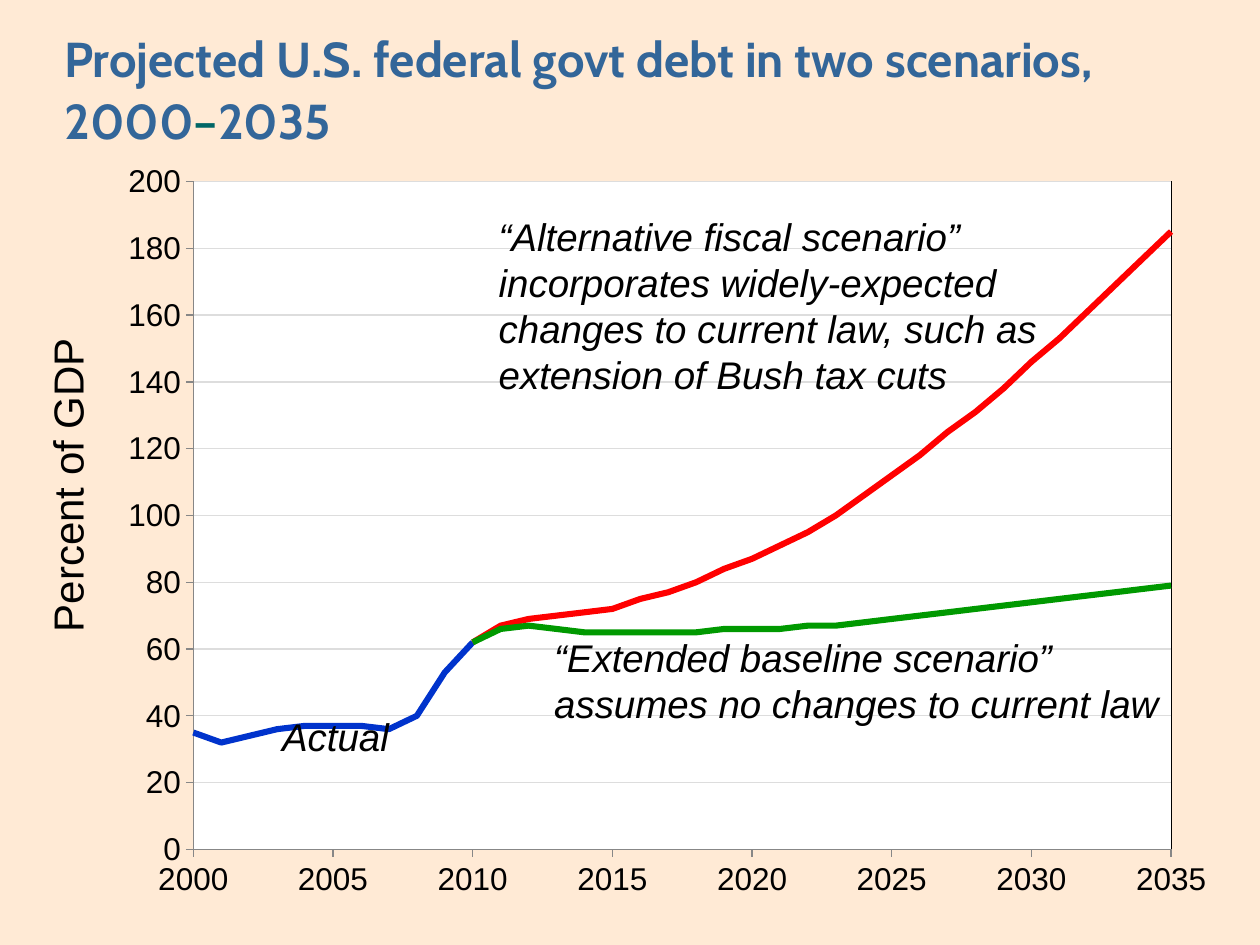
from lxml import etree
from pptx import Presentation
from pptx.chart.data import XyChartData
from pptx.dml.color import RGBColor
from pptx.enum.chart import XL_CHART_TYPE, XL_MARKER_STYLE, XL_TICK_MARK
from pptx.enum.text import MSO_ANCHOR, PP_ALIGN
from pptx.oxml import parse_xml
from pptx.oxml.ns import nsdecls, qn
from pptx.util import Inches, Pt

SCATTER = XL_CHART_TYPE.XY_SCATTER_LINES_NO_MARKERS
NO_MARKER = XL_MARKER_STYLE.NONE
OUTSIDE, NO_TICK = XL_TICK_MARK.OUTSIDE, XL_TICK_MARK.NONE
TOP, MIDDLE = MSO_ANCHOR.TOP, MSO_ANCHOR.MIDDLE
LEFT, CENTER = PP_ALIGN.LEFT, PP_ALIGN.CENTER

COLORS = {
    "background": "FFEAD5", "title": "336699", "dash": "006666",
    "text": "000000", "plot": "FFFFFF", "grid": "DDDDDD", "axis": "878787",
    "baseline": "009900", "alternative": "FF0000", "actual": "0033CC",
}
PLOT_SHARES = {"x": 0.078, "y": 0.043, "w": 0.871, "h": 0.875}

FIRST_YEAR = 2000
NOT_PROJECTED = [None] * 10
ACTUAL = [35, 32, 34, 36, 37, 37, 37, 36, 40, 53, 62]
BASELINE = NOT_PROJECTED + [
    62, 66, 67, 66, 65, 65, 65, 65, 65, 66, 66, 66, 67, 67, 68, 69,
    70, 71, 72, 73, 74, 75, 76, 77, 78, 79]
ALTERNATIVE = NOT_PROJECTED + [
    62, 67, 69, 70, 71, 72, 75, 77, 80, 84, 87, 91, 95, 100, 106, 112,
    118, 125, 131, 138, 146, 153, 161, 169, 177, 185]
# name, values, colour
SERIES = [
    ("Series 1", BASELINE, "baseline"),
    ("Series 2", ALTERNATIVE, "alternative"),
    ("Series 3", ACTUAL, "actual"),
]


def rgb(name):
    return RGBColor.from_string(COLORS[name])


class Deck:
    """Style and current slide; boxes are left, top, width, height in percent."""

    font, heading_font = "Arial", "Cabin"

    def __init__(self):
        self.prs = Presentation()
        self.prs.slide_width, self.prs.slide_height = Inches(10), Inches(7.5)

    def add_slide(self):
        self.s = self.prs.slides.add_slide(self.prs.slide_layouts[6])
        self.s.background.fill.solid()
        self.s.background.fill.fore_color.rgb = rgb("background")

    def place(self, box):
        sizes = (self.prs.slide_width, self.prs.slide_height) * 2
        return [round(size * share / 100) for size, share in zip(sizes, box)]

    def text(self, box, runs, size, font=None, bold=False, italic=False,
             anchor=TOP, align=LEFT, inset=True, rotation=0, spacing=1.0):
        """Add one paragraph made of (text, colour) runs."""
        sp = self.s.shapes.add_textbox(*self.place(box))
        sp.rotation = rotation
        tf = sp.text_frame
        tf.word_wrap, tf.vertical_anchor = True, anchor
        if not inset:
            tf.margin_left = tf.margin_top = tf.margin_right = tf.margin_bottom = 0
        p = tf.paragraphs[0]
        p.alignment, p.line_spacing = align, spacing
        for words, color in runs:
            r = p.add_run()
            r.text = words
            r.font.name, r.font.size = font or self.font, Pt(size)
            r.font.bold, r.font.italic = bold, italic
            r.font.color.rgb = rgb(color)

    def title(self, box, runs):
        self.text(box, runs, 28, self.heading_font, bold=True, anchor=MIDDLE,
                  inset=False, spacing=1.05)

    def note(self, box, words):
        self.text(box, [(words, "text")], 22, italic=True)

    def axis_label(self, box, words):
        self.text(box, [(words, "text")], 24, align=CENTER, inset=False, rotation=270)

    def chart(self, box, series):
        data = XyChartData()
        for name, values, _ in series:
            line = data.add_series(name)
            for year, value in enumerate(values, FIRST_YEAR):
                line.add_data_point(year, value)
        chart = self.s.shapes.add_chart(SCATTER, *self.place(box), data).chart
        self.clear_missing(chart)
        chart.has_legend = chart.has_title = False
        chart.font.name, chart.font.size = self.font, Pt(18)
        chart.font.color.rgb = rgb("text")
        self.axis(chart.category_axis, FIRST_YEAR, 2035, 5)
        self.axis(chart.value_axis, 0, 200, 20)
        chart.category_axis.has_major_gridlines = False
        grid = chart.value_axis.major_gridlines.format.line
        grid.color.rgb, grid.width = rgb("grid"), Pt(0.75)
        for plotted, (_, _, color) in zip(chart.plots[0].series, series):
            plotted.smooth = False
            plotted.marker.style = NO_MARKER
            plotted.format.line.color.rgb = rgb(color)
            plotted.format.line.width = Pt(3.5)
        chart.plots[0].vary_by_categories = False
        self.plot_area(chart)

    def clear_missing(self, chart):
        """Drop the points without a value, so that they stay empty."""
        for point in list(chart.element.iter(qn("c:pt"))):
            if point.findtext(qn("c:v")) in ("None", ""):
                point.getparent().remove(point)

    def axis(self, axis, low, high, step):
        axis.minimum_scale, axis.maximum_scale, axis.major_unit = low, high, step
        axis.major_tick_mark, axis.minor_tick_mark = OUTSIDE, NO_TICK
        axis.has_title = False
        axis.tick_labels.number_format = "0"
        axis.tick_labels.number_format_is_linked = False
        axis.format.line.color.rgb = rgb("axis")
        axis.format.line.width = Pt(0.75)

    def plot_area(self, chart):
        """Fix the inner plot position and give it a fill and hairline border."""
        area = chart.element.find(".//" + qn("c:plotArea"))
        for old in area.findall(qn("c:layout")):
            area.remove(old)
        layout = etree.Element(qn("c:layout"))
        manual = etree.SubElement(layout, qn("c:manualLayout"))
        settings = {"layoutTarget": "inner", "xMode": "edge", "yMode": "edge", **PLOT_SHARES}
        for tag, value in settings.items():
            etree.SubElement(manual, qn("c:" + tag)).set("val", str(value))
        area.insert(0, layout)
        area.append(parse_xml(
            f'<c:spPr {nsdecls("c", "a")}>'
            f'<a:solidFill><a:srgbClr val="{COLORS["plot"]}"/></a:solidFill>'
            f'<a:ln w="0"><a:solidFill><a:srgbClr val="{COLORS["text"]}"/>'
            '</a:solidFill></a:ln></c:spPr>'))


def main():
    deck = Deck()
    deck.add_slide()
    deck.title((5.1, 2.4, 90.2, 13.73), [
        ("Projected U.S. federal govt debt in two scenarios, 2000", "title"),
        ("–", "dash"), ("2035", "title")])
    deck.axis_label((-8, 48.67, 26.6, 5.33), "Percent of GDP")
    deck.chart((8.4, 15.73, 89.1, 80.8), SERIES)
    deck.note((43, 66.4, 52.2, 11.2),
              "“Extended baseline scenario” assumes no changes to current law")
    deck.note((38.6, 21.87, 45, 21.07),
              "“Alternative fiscal scenario” incorporates widely-expected "
              "changes to current law, such as extension of Bush tax cuts")
    deck.note((21.4, 74.8, 11.7, 6.27), "Actual")
    deck.prs.save("out.pptx")


if __name__ == "__main__":
    main()
